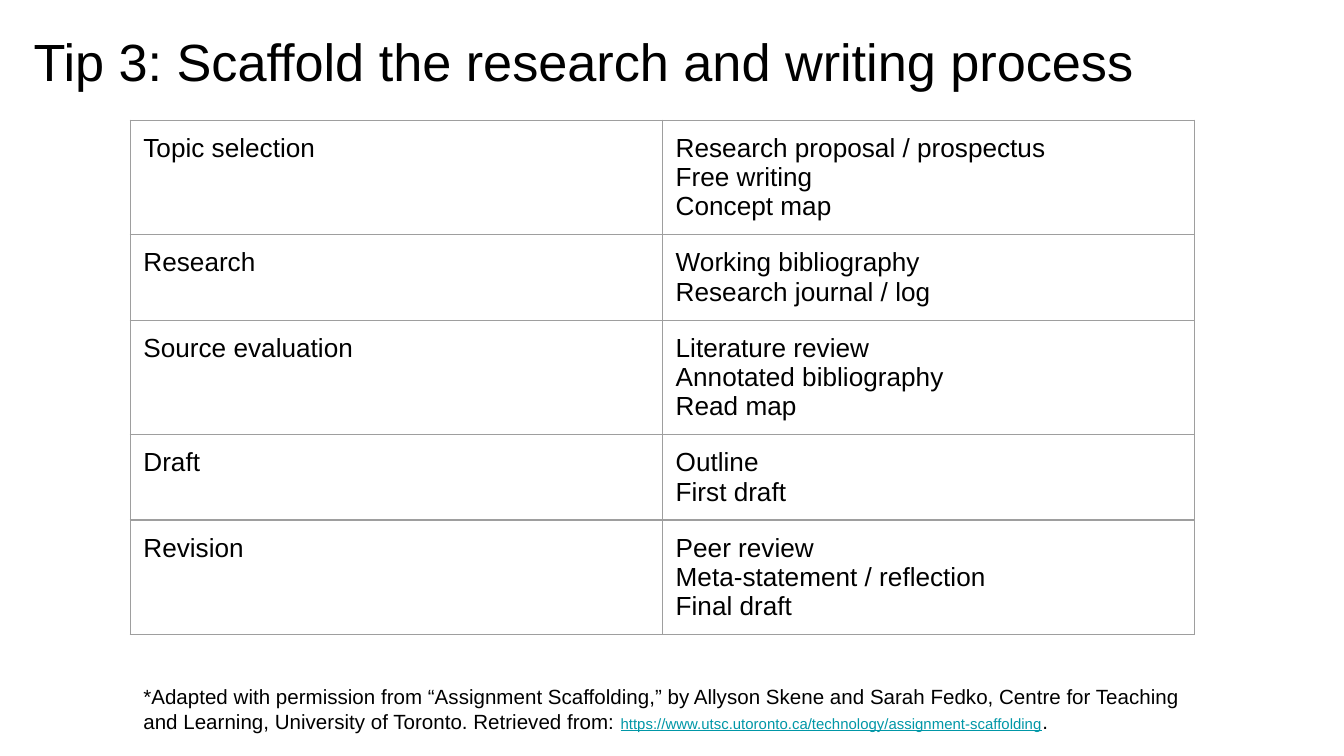
from lxml import etree
from pptx import Presentation
from pptx.dml.color import RGBColor
from pptx.enum import text
from pptx.oxml import ns
from pptx.util import Cm, Pt

# Content
TITLE = "Tip 3: Scaffold the research and writing process"
STAGES = [
    ("Topic selection", ["Research proposal / prospectus", "Free writing", "Concept map"]),
    ("Research", ["Working bibliography", "Research journal / log"]),
    ("Source evaluation", ["Literature review", "Annotated bibliography", "Read map"]),
    ("Draft", ["Outline", "First draft"]),
    ("Revision", ["Peer review", "Meta-statement / reflection", "Final draft"]),
]
CREDIT = (
    "*Adapted with permission from “Assignment Scaffolding,” by Allyson Skene "
    "and Sarah Fedko, Centre for Teaching and Learning, University of Toronto. "
    "Retrieved from: "
)
CREDIT_URL = "https://www.utsc.utoronto.ca/technology/assignment-scaffolding"

# Format and layout, lengths in cm
FONT, BLACK, TEAL, GREY = "Arial", "000000", "0097A7", "9E9E9E"
INSET = 0.25
LEFT, TABLE_TOP, COLUMN_WIDTH = 2.46, 2.27, 10.06
LINE_HEIGHT = 0.55


def color(value):
    return RGBColor.from_string(value)


def add_text(paragraph, content, size=14, hue=BLACK, underline=False):
    run = paragraph.add_run()
    run.text = content
    run.font.name = FONT
    run.font.size = Pt(size)
    run.font.underline = underline
    run.font.color.rgb = color(hue)


def set_frame(frame):
    frame.margin_left = frame.margin_right = Cm(INSET)
    frame.margin_top = frame.margin_bottom = Cm(INSET)
    frame.vertical_anchor = text.MSO_ANCHOR.TOP
    frame.word_wrap = True
    frame.auto_size = text.MSO_AUTO_SIZE.NONE


def set_borders(cell, hue=GREY, width=0.75):
    properties = cell._tc.get_or_add_tcPr()
    for position, side in enumerate(("lnL", "lnR", "lnT", "lnB")):
        line = etree.Element(ns.qn(f"a:{side}"), w=str(Pt(width)))
        fill = etree.SubElement(line, ns.qn("a:solidFill"))
        etree.SubElement(fill, ns.qn("a:srgbClr"), val=hue)
        properties.insert(position, line)


def fill_cell(cell, lines):
    cell.margin_left = cell.margin_right = Cm(INSET)
    cell.margin_top = cell.margin_bottom = Cm(INSET)
    cell.fill.background()
    set_borders(cell)
    frame = cell.text_frame
    for index, line in enumerate(lines):
        paragraph = frame.add_paragraph() if index else frame.paragraphs[0]
        add_text(paragraph, line)


presentation = Presentation()
presentation.slide_width, presentation.slide_height = Cm(25.4), Cm(14.28)
slide = presentation.slides.add_slide(presentation.slide_layouts[5])
slide.background.fill.solid()
slide.background.fill.fore_color.rgb = color("FFFFFF")

# Stage table: each row is as tall as its list of tasks
heights = [Cm(2 * INSET + LINE_HEIGHT * len(tasks)) for _, tasks in STAGES]
table = slide.shapes.add_table(
    len(STAGES), 2, Cm(LEFT), Cm(TABLE_TOP), Cm(2 * COLUMN_WIDTH), sum(heights)
).table
table.first_row = table.horz_banding = False
for column in table.columns:
    column.width = Cm(COLUMN_WIDTH)
for row, height, (stage, tasks) in zip(table.rows, heights, STAGES):
    row.height = height
    fill_cell(row.cells[0], [stage])
    fill_cell(row.cells[1], tasks)

# Title
title = slide.shapes.title
title.left, title.top, title.width, title.height = Cm(0), Cm(0.3), Cm(22.05), Cm(2.2)
set_frame(title.text_frame)
heading = title.text_frame.paragraphs[0]
heading.alignment = text.PP_ALIGN.CENTER
add_text(heading, TITLE, size=28)

# Source credit
credit = slide.shapes.add_textbox(Cm(LEFT), Cm(12.67), Cm(2 * COLUMN_WIDTH), Cm(0.7))
set_frame(credit.text_frame)
paragraph = credit.text_frame.paragraphs[0]
add_text(paragraph, CREDIT, size=11)
add_text(paragraph, CREDIT_URL, size=8, hue=TEAL, underline=True)
add_text(paragraph, ".", size=11)

presentation.save("out.pptx")
